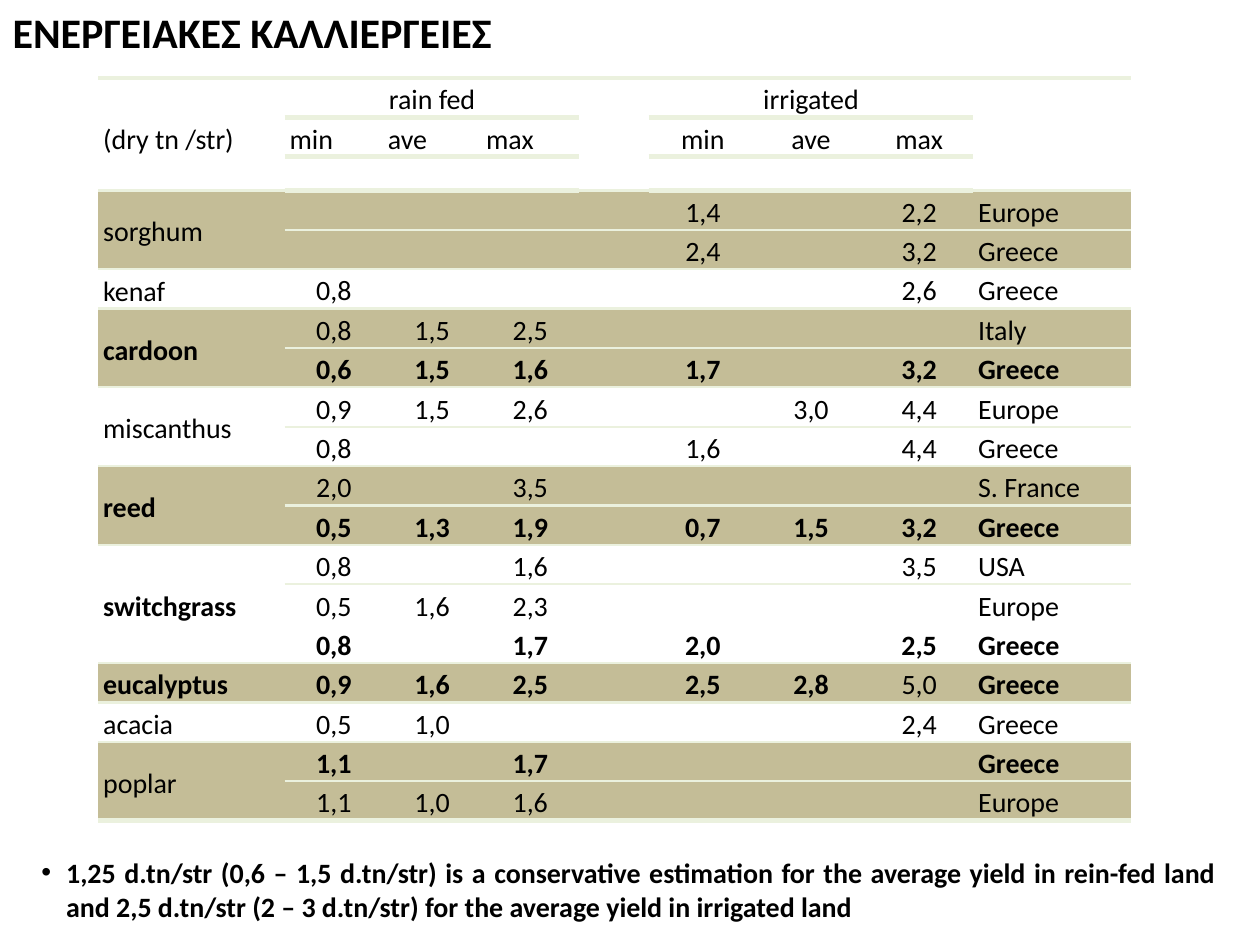
"""Build a slide with a table of energy crop yields and a summary bullet."""
from dataclasses import dataclass

from lxml.etree import SubElement
from pptx import Presentation
from pptx.dml.color import RGBColor
from pptx.enum.text import MSO_ANCHOR, MSO_AUTO_SIZE, PP_ALIGN
from pptx.oxml.ns import qn
from pptx.util import Cm, Pt


@dataclass(frozen=True)
class Theme:
    font: str = "Calibri"
    ink: str = "000000"
    band: str = "C4BD97"
    rule: str = "EBF1DE"
    title_size: int = 24
    text_size: int = 16
    blank_size: int = 12
    thin: float = 1.5
    thick: float = 3


THEME = Theme()
LEFT, CENTER, JUSTIFY = PP_ALIGN.LEFT, PP_ALIGN.CENTER, PP_ALIGN.JUSTIFY
NO_STYLE = "{2D5ABB26-0587-4C30-8999-92F81FD0307C}"
COLUMN_WIDTHS = [3.76, 1.98, 1.98, 1.98, 1.4, 2.18, 2.18, 2.18, 3.18]
ROW_HEIGHT, GAP_HEIGHT, GAP_ROW = 0.77, 0.68, 2
MEASURE_COLUMNS = (1, 2, 3, 5, 6, 7)
HEADER = [
    "|rain fed||||irrigated|||",
    "(dry tn /str)|min|ave|max||min|ave|max|",
    "||||||||",
]
# An asterisk marks a bold value.
CROPS = [
    ("sorghum", ["||||1,4||2,2|Europe", "||||2,4||3,2|Greece"]),
    ("kenaf", ["0,8||||||2,6|Greece"]),
    ("*cardoon", ["0,8|1,5|2,5|||||Italy",
                  "*0,6|*1,5|*1,6||*1,7||*3,2|*Greece"]),
    ("miscanthus", ["0,9|1,5|2,6|||3,0|4,4|Europe",
                    "0,8||||1,6||4,4|Greece"]),
    ("*reed", ["2,0||3,5|||||S. France",
               "*0,5|*1,3|*1,9||*0,7|*1,5|*3,2|*Greece"]),
    ("*switchgrass", ["0,8||1,6||||3,5|USA",
                      "0,5|1,6|2,3|||||Europe",
                      "*0,8||*1,7||*2,0||*2,5|*Greece"]),
    ("*eucalyptus", ["*0,9|*1,6|*2,5||*2,5|*2,8|5,0|*Greece"]),
    ("acacia", ["0,5|1,0|||||2,4|Greece"]),
    ("poplar", ["*1,1||*1,7|||||*Greece", "1,1|1,0|1,6|||||Europe"]),
]


def write(frame, text, size=THEME.text_size, bold=False, align=LEFT, spacing=1.0):
    paragraph = frame.paragraphs[0]
    paragraph.alignment = align
    paragraph.line_spacing = spacing
    paragraph.space_before = Pt(0)
    if not text:
        SubElement(paragraph._p, qn("a:endParaRPr"), sz=str(THEME.blank_size * 100))
        return paragraph
    run = paragraph.add_run()
    run.text = text
    run.font.name = THEME.font
    run.font.size = Pt(size)
    run.font.bold = bold
    run.font.color.rgb = RGBColor.from_string(THEME.ink)
    return paragraph


def draw_edges(cell, **widths):
    for side, width in widths.items():
        if width:
            edge = SubElement(cell._tc.get_or_add_tcPr(), qn(f"a:ln{side}"), w=str(Pt(width)))
            paint = SubElement(edge, qn("a:solidFill"))
            SubElement(paint, qn("a:srgbClr"), val=THEME.rule)


presentation = Presentation()
presentation.slide_width, presentation.slide_height = Cm(25.4), Cm(19.05)
slide = presentation.slides.add_slide(presentation.slide_layouts[1])

heading, summary = slide.placeholders
heading.left, heading.top, heading.width, heading.height = Cm(0), Cm(0), Cm(25.4), Cm(1.27)
summary.left, summary.top, summary.width, summary.height = Cm(0.58), Cm(17.12), Cm(24.2), Cm(1.63)
for placeholder in (heading, summary):
    placeholder.text_frame.auto_size = MSO_AUTO_SIZE.NONE
    placeholder.text_frame.vertical_anchor = MSO_ANCHOR.TOP
write(heading.text_frame, "ΕΝΕΡΓΕΙΑΚΕΣ ΚΑΛΛΙΕΡΓΕΙΕΣ", size=THEME.title_size, bold=True)
estimate = write(
    summary.text_frame,
    "1,25 d.tn/str (0,6 – 1,5 d.tn/str) is a conservative estimation for the average yield "
    "in rein-fed land and 2,5 d.tn/str (2 – 3 d.tn/str) for the average yield in irrigated land",
    bold=True, align=JUSTIFY)
bullet_format = estimate._p.get_or_add_pPr()
bullet_format.set("marL", str(Cm(0.5)))
bullet_format.set("indent", str(Cm(-0.5)))
SubElement(bullet_format, qn("a:buFont"), typeface="Arial")
SubElement(bullet_format, qn("a:buChar"), char="•")

row_count = len(HEADER) + sum(len(harvests) for _, harvests in CROPS)
yields = slide.shapes.add_table(
    row_count, len(COLUMN_WIDTHS), Cm(1.98), Cm(1.57),
    Cm(sum(COLUMN_WIDTHS)), Cm(ROW_HEIGHT * row_count)).table
yields.first_row = yields.horz_banding = False
yields._tbl.tblPr.find(qn("a:tableStyleId")).text = NO_STYLE
for column, width in zip(yields.columns, COLUMN_WIDTHS):
    column.width = Cm(width)
for index, row in enumerate(yields.rows):
    row.height = Cm(GAP_HEIGHT if index == GAP_ROW else ROW_HEIGHT)
    for cell in row.cells:
        cell.margin_left = cell.margin_right = Cm(0.1)
        cell.margin_top = cell.margin_bottom = 0

for first in (1, 5):
    yields.cell(0, first).merge(yields.cell(0, first + 2))
for index, line in enumerate(HEADER):
    for column, label in enumerate(line.split("|")):
        cell = yields.cell(index, column)
        ruled = column in MEASURE_COLUMNS
        draw_edges(cell,
                   T=THEME.thick if index == 0 or ruled else 0,
                   B=THEME.thick if ruled and index < GAP_ROW else 0)
        cell.fill.background()
        centered = ruled and (index == 0 or column > 4)
        write(cell.text_frame, label, align=CENTER if centered else LEFT, spacing=1.15)

top = len(HEADER)
for order, (crop, harvests) in enumerate(CROPS):
    last = len(harvests) - 1
    bottom_width = THEME.thick if order == len(CROPS) - 1 else THEME.thin
    if last:
        yields.cell(top, 0).merge(yields.cell(top + last, 0))
    for offset, harvest in enumerate(harvests):
        name = crop if offset == 0 else ""
        for column, value in enumerate([name, *harvest.split("|")]):
            cell = yields.cell(top + offset, column)
            draw_edges(cell,
                       T=THEME.thin if offset == 0 else 0,
                       B=bottom_width if offset == last or cell.is_merge_origin else 0)
            if order % 2 == 0:
                cell.fill.solid()
                cell.fill.fore_color.rgb = RGBColor.from_string(THEME.band)
            else:
                cell.fill.background()
            cell.vertical_anchor = MSO_ANCHOR.MIDDLE if column == 0 else MSO_ANCHOR.TOP
            write(cell.text_frame, value.lstrip("*"), bold=value.startswith("*"),
                  align=CENTER if column in MEASURE_COLUMNS else LEFT, spacing=1.15)
    top += len(harvests)

presentation.save("out.pptx")
